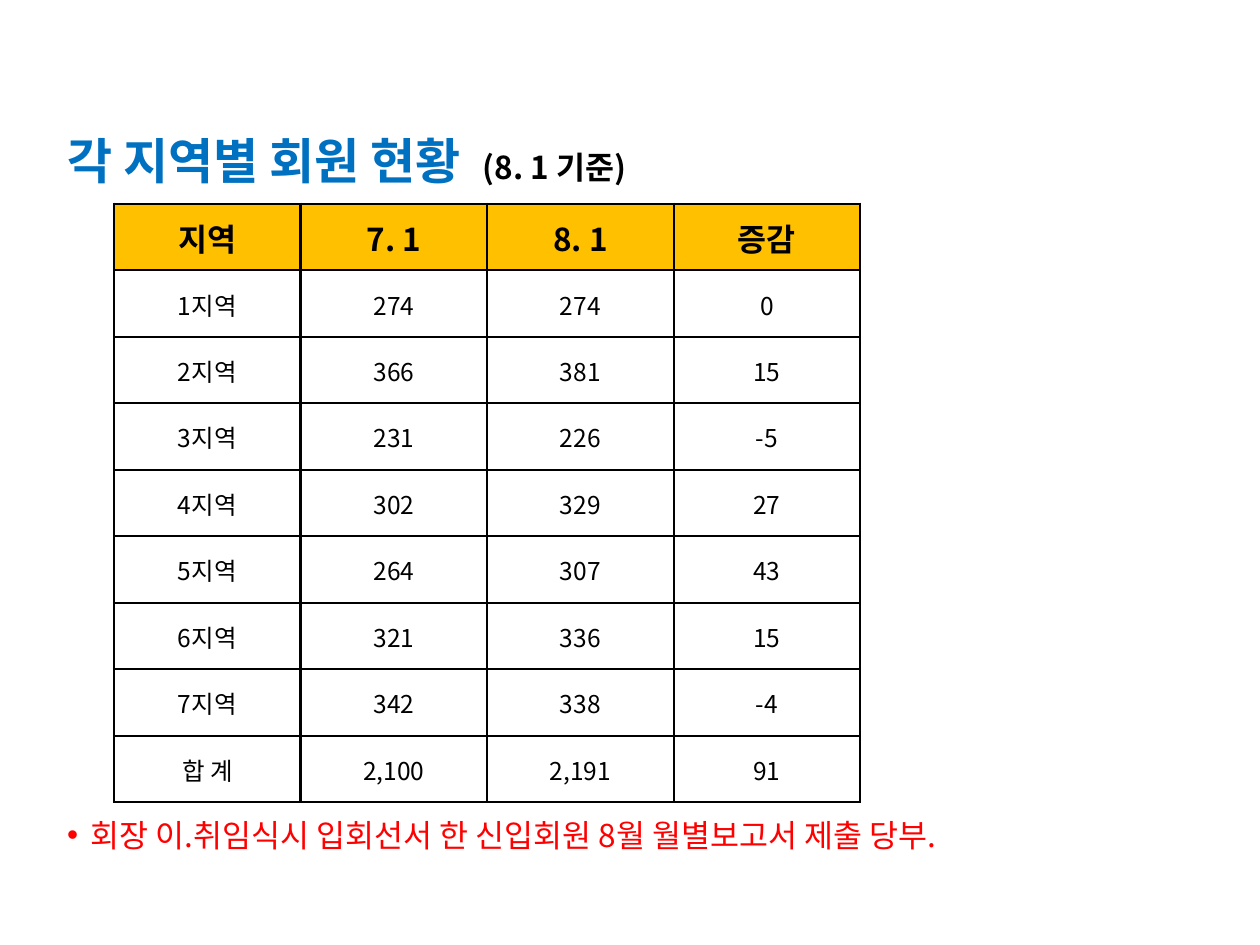
from typing import NamedTuple

from lxml.etree import SubElement
from pptx import Presentation
from pptx.dml.color import RGBColor
from pptx.enum.text import MSO_ANCHOR, PP_ALIGN
from pptx.oxml.ns import qn
from pptx.util import Cm, Pt

BLACK = RGBColor(0, 0, 0)
WHITE = RGBColor(255, 255, 255)
BLUE = RGBColor(0x00, 0x70, 0xC0)
GOLD = RGBColor(0xFF, 0xC0, 0x00)
RED = RGBColor(255, 0, 0)
FACE = "Noto Sans CJK KR"

COL_W, ROW_H = Cm(3.76), Cm(1.34)


class Region(NamedTuple):
    name: str
    july: int
    august: int

    def cells(self) -> list[str]:
        change = self.august - self.july
        return [self.name, f"{self.july:,}", f"{self.august:,}", f"{change}"]


class Look(NamedTuple):
    size: int
    bold: bool
    fill: RGBColor


HEAD = Look(18, True, GOLD)
BODY = Look(14, False, WHITE)

HEADS = ["지역", "7. 1", "8. 1", "증감"]
COUNTS = [(274, 274), (366, 381), (231, 226), (302, 329),
          (264, 307), (321, 336), (342, 338)]


def set_font(para, size: int, bold: bool, color: RGBColor) -> None:
    """Style a paragraph, for Latin and Korean letters alike."""
    font = para.font
    font.size, font.bold, font.name = Pt(size), bold, FACE
    font.color.rgb = color
    SubElement(font._rPr, qn("a:ea"), typeface=FACE)


def place(shape, top: float, height: float):
    """Move a placeholder and return its first paragraph, set flush left."""
    shape.left, shape.top = Cm(1.1), Cm(top)
    shape.width, shape.height = Cm(22.86), Cm(height)
    shape.text_frame.vertical_anchor = MSO_ANCHOR.MIDDLE
    para = shape.text_frame.paragraphs[0]
    para.alignment = PP_ALIGN.LEFT
    para.space_before = Pt(0)
    return para


def add_borders(cell) -> None:
    props = cell._tc.get_or_add_tcPr()
    for spot, side in enumerate(("lnL", "lnR", "lnT", "lnB")):
        line = SubElement(props, qn(f"a:{side}"), w=str(Pt(1.5)))
        fill = SubElement(line, qn("a:solidFill"))
        SubElement(fill, qn("a:srgbClr"), val=str(BLACK))
        props.insert(spot, line)


def fill_cell(cell, text: str, look: Look) -> None:
    cell.text = text
    cell.vertical_anchor = MSO_ANCHOR.MIDDLE
    cell.margin_left = cell.margin_right = cell.margin_top = Cm(0.03)
    cell.margin_bottom = 0
    cell.fill.solid()
    cell.fill.fore_color.rgb = look.fill
    para = cell.text_frame.paragraphs[0]
    para.alignment = PP_ALIGN.CENTER
    set_font(para, look.size, look.bold, BLACK)
    add_borders(cell)


def add_title(slide) -> None:
    para = place(slide.shapes.title, 2.48, 1.5)
    set_font(para, 28, True, BLUE)
    para.add_run().text = "각 지역별 회원 현황  "
    date = para.add_run()
    date.text = "(8. 1 기준)"
    date.font.size = Pt(18)
    date.font.color.rgb = BLACK


def add_note(slide) -> None:
    para = place(slide.placeholders[1], 16.23, 1.2)
    para.text = "회장 이.취임식시 입회선서 한 신입회원 8월 월별보고서 제출 당부."
    set_font(para, 18, False, RED)
    props = para._p.get_or_add_pPr()
    props.set("marL", str(Cm(0.48)))
    props.set("indent", str(-Cm(0.48)))


def add_counts(slide) -> None:
    regions = [Region(f"{num}지역", *pair)
               for num, pair in enumerate(COUNTS, 1)]
    total = Region("합 계", *map(sum, zip(*COUNTS)))
    rows = [HEADS] + [item.cells() for item in regions + [total]]
    table = slide.shapes.add_table(
        len(rows), len(HEADS), Cm(2.3), Cm(4.11),
        COL_W * len(HEADS), ROW_H * len(rows)).table
    for col in table.columns:
        col.width = COL_W
    for r, row in enumerate(rows):
        table.rows[r].height = ROW_H
        for c, text in enumerate(row):
            fill_cell(table.cell(r, c), text, BODY if r else HEAD)


def main() -> None:
    deck = Presentation()
    deck.slide_width, deck.slide_height = Cm(25.4), Cm(19.05)
    slide = deck.slides.add_slide(deck.slide_layouts[1])
    add_title(slide)
    add_note(slide)
    add_counts(slide)
    deck.save("out.pptx")


if __name__ == "__main__":
    main()
